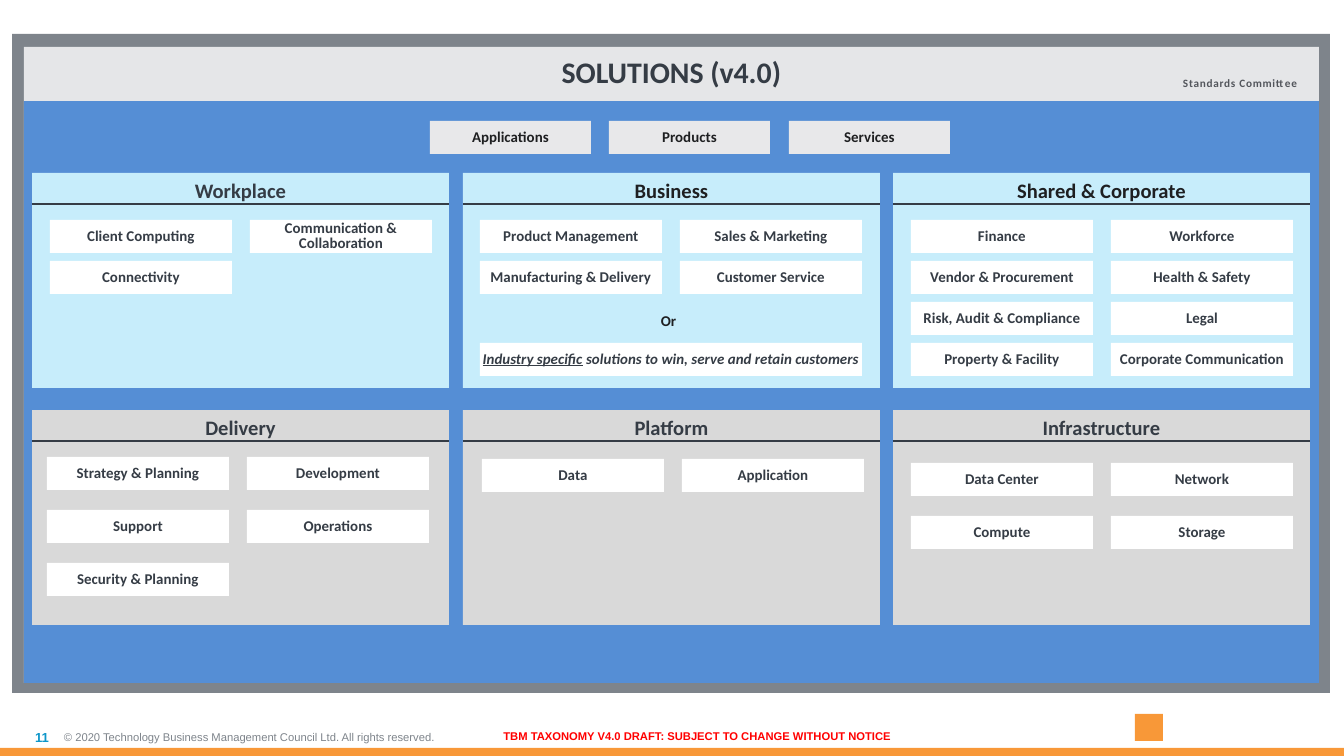
from dataclasses import dataclass

from lxml import etree
from pptx import Presentation
from pptx import util as u
from pptx.dml.color import RGBColor
from pptx.enum import shapes, text
from pptx.oxml import ns

PX = 914400 / 134.4
TOP, MID = text.MSO_ANCHOR.TOP, text.MSO_ANCHOR.MIDDLE
LEFT, MIDDLE, RIGHT = text.PP_ALIGN.LEFT, text.PP_ALIGN.CENTER, text.PP_ALIGN.RIGHT


@dataclass(frozen=True)
class Theme:
    body: str = "Calibri"
    foot: str = "Arial"
    dark: str = "353C45"
    black: str = "1E1F21"
    gray: str = "7E848B"
    note: str = "53565C"
    head: str = "E5E6E8"
    blue: str = "558ED5"
    sky: str = "C7EDFB"
    silver: str = "D9D9D9"
    pill: str = "E8E8EA"
    white: str = "FFFFFF"
    orange: str = "F89838"
    cyan: str = "0D96C9"
    red: str = "FF0000"
    title: int = 16
    panel: int = 11
    tile: int = 8
    page: int = 7
    small: int = 6


T = Theme()
COLS = (32, 463, 893)
ROWS = (173, 410)
PANEL_W, PANEL_H, RULE_Y = 417, 215, 31
TILE_W, TILE_H, TILE_STEP = 182, 33, 200

# Panel: title, title colour, first tile x and y, tile row step, tile labels by row
PANELS = (
    (
        ("Workplace", T.dark, 50, 220, 41,
         ("Client Computing", "Communication & Collaboration", "Connectivity")),
        ("Business", T.black, 480, 220, 41,
         ("Product Management", "Sales & Marketing",
          "Manufacturing & Delivery", "Customer Service")),
        ("Shared & Corporate", T.black, 911, 220, 41,
         ("Finance", "Workforce", "Vendor & Procurement", "Health & Safety",
          "Risk, Audit & Compliance", "Legal",
          "Property & Facility", "Corporate Communication")),
    ),
    (
        ("Delivery", T.dark, 47, 457, 53,
         ("Strategy & Planning", "Development", "Support", "Operations",
          "Security & Planning")),
        ("Platform", T.dark, 482, 459, 53, ("Data", "Application")),
        ("Infrastructure", T.dark, 911, 463, 53,
         ("Data Center", "Network", "Compute", "Storage")),
    ),
)


def px(n):
    return u.Emu(round(n * PX))


def rgb(code):
    return RGBColor.from_string(code)


def rect(slide, x, y, w, h, fill):
    box = slide.shapes.add_shape(shapes.MSO_SHAPE.RECTANGLE, px(x), px(y), px(w), px(h))
    box.shadow.inherit = False
    box.fill.solid()
    box.fill.fore_color.rgb = rgb(fill)
    box.line.fill.background()
    return box


def write(box, words, size, color, face=T.body, align=MIDDLE, anchor=MID,
          pad=0, wrap=True, bold=True, space=None):
    """Fill the first paragraph; words is a string or (string, font options) runs."""
    frame = box.text_frame
    frame.word_wrap = wrap
    frame.vertical_anchor = anchor
    frame.margin_left = frame.margin_right = px(pad)
    frame.margin_top = frame.margin_bottom = px(pad)
    para = frame.paragraphs[0]
    para.alignment = align
    if space:
        para.line_spacing = space
    for part, style in [(words, {})] if isinstance(words, str) else words:
        run = para.add_run()
        run.text = part
        font = run.font
        font.name, font.size, font.bold = face, u.Pt(size), bold
        font.color.rgb = rgb(color)
        for key, value in style.items():
            setattr(font, key, value)
    return para


def label(slide, x, y, w, h, words, size, color, **style):
    box = slide.shapes.add_textbox(px(x), px(y), px(w), px(h))
    return write(box, words, size, color, **style)


def rule(slide, x, y, w):
    line = slide.shapes.add_connector(
        shapes.MSO_CONNECTOR.STRAIGHT, px(x), px(y), px(x + w), px(y))
    line.line.color.rgb = rgb(T.dark)
    line.line.width = u.Pt(1)
    etree.SubElement(line._element.spPr, ns.qn("a:effectLst"))


def tile(slide, x, y, words, w=TILE_W):
    box = rect(slide, x, y, w, TILE_H, T.white)
    write(box, words, T.tile, T.dark, space=0.85)


def panel(slide, x, y, fill, name, color, left, top, step, names):
    box = rect(slide, x, y, PANEL_W, PANEL_H, fill)
    write(box, name, T.panel, color, anchor=TOP, pad=5)
    rule(slide, x, y + RULE_Y, PANEL_W)
    for i, item in enumerate(names):
        row, col = divmod(i, 2)
        tile(slide, left + col * TILE_STEP, top + row * step, item)


def footer(slide):
    label(slide, 64, 718, 452, 38,
          "© 2020 Technology Business Management Council Ltd. All rights reserved.",
          T.small, T.gray, face=T.foot, align=LEFT, bold=False)
    label(slide, 0, 718, 49, 38, "11", T.page, T.cyan, face=T.foot, align=RIGHT)
    rect(slide, 1135, 714, 28, 27, T.orange)
    rect(slide, 0, 748, 1344, 8, T.orange)
    label(slide, 501, 730, 392, 13,
          "TBM TAXONOMY V4.0 DRAFT: SUBJECT TO CHANGE WITHOUT NOTICE",
          T.small, T.red, face=T.foot, wrap=False)


def frame(slide):
    rect(slide, 12, 34, 1318, 659, T.gray)
    head = rect(slide, 24, 47, 1295, 636, T.head)
    write(head, "SOLUTIONS (v4.0)", T.title, T.dark, anchor=TOP, pad=7)
    rect(slide, 24, 101, 1295, 582, T.blue)
    para = label(slide, 1183, 76, 117, 13, "Standards Committee", T.small, T.note,
                 align=LEFT, anchor=TOP, wrap=False)
    para.runs[0].font._element.set("spc", "40")


def main():
    deck = Presentation()
    deck.slide_width, deck.slide_height = px(1344), px(756)
    slide = deck.slides.add_slide(deck.slide_layouts[6])
    footer(slide)
    frame(slide)
    for i, name in enumerate(("Applications", "Products", "Services")):
        box = rect(slide, 430 + i * 359 // 2, 121, 161, TILE_H, T.pill)
        write(box, name, T.tile, T.black, pad=7, wrap=False, space=0.85)
    for y, fill, group in zip(ROWS, (T.sky, T.silver), PANELS):
        for x, data in zip(COLS, group):
            panel(slide, x, y, fill, *data)
    label(slide, 637, 305, 63, 32, "Or", T.tile, T.black, anchor=TOP, pad=7)
    tile(slide, 480, 343, [
        ("Industry specific", {"italic": True, "underline": True}),
        (" solutions to win, serve and retain customers", {"italic": True}),
    ], w=TILE_W + TILE_STEP)
    deck.save("out.pptx")


if __name__ == "__main__":
    main()
